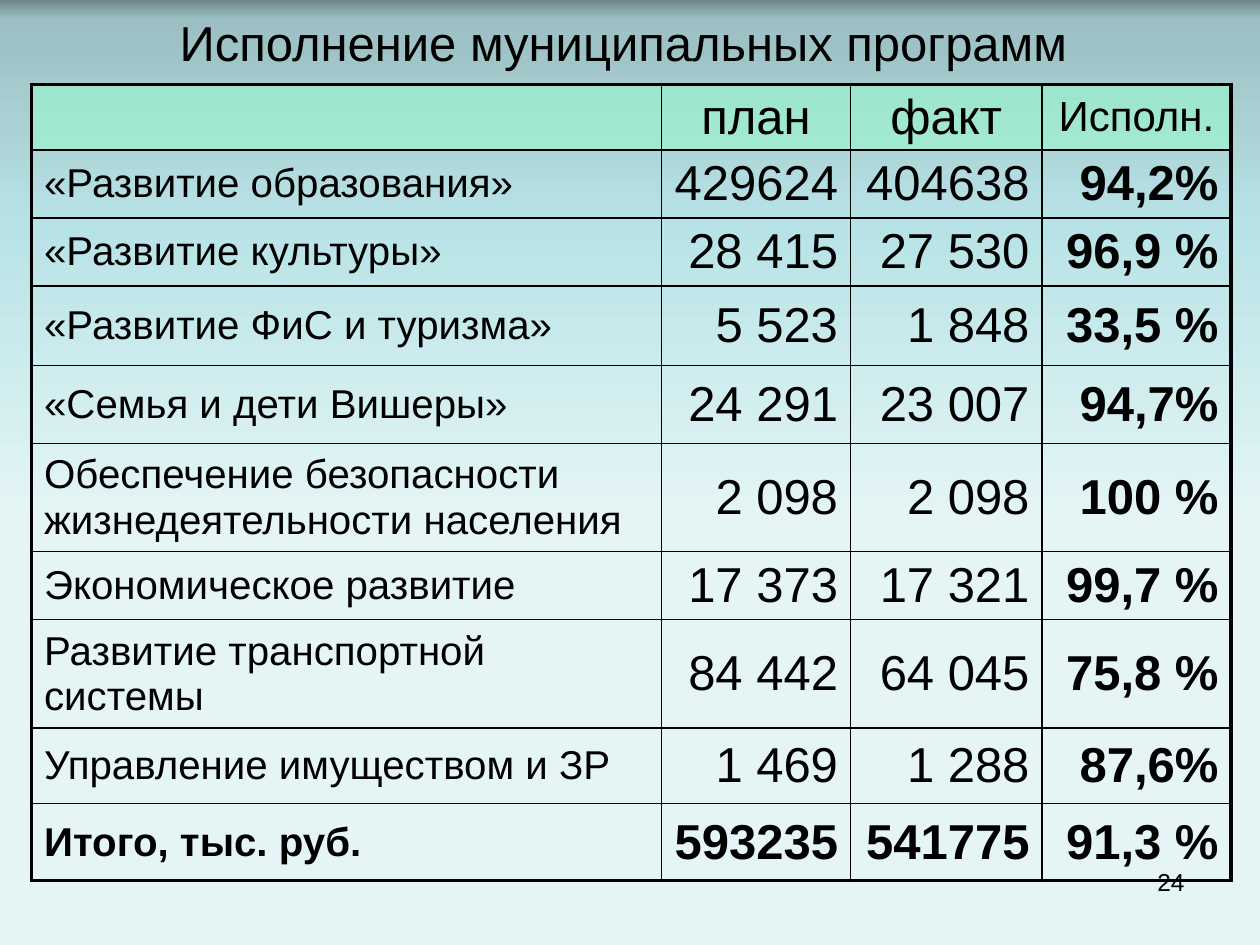
from dataclasses import dataclass
from typing import NamedTuple

from lxml.etree import SubElement
from pptx import Presentation
from pptx.dml.color import RGBColor
from pptx.enum.text import MSO_ANCHOR, PP_ALIGN
from pptx.oxml import parse_xml
from pptx.oxml.ns import qn
from pptx.util import Inches, Pt


@dataclass(frozen=True)
class Theme:
    """Colours, font and type sizes of the slide."""

    font: str = "Arial"
    ink: str = "000000"
    header: str = "99FFCC"
    header_alpha: int = 50
    sky: tuple = ((0, "6D8688"), (2, "9BBFC2"), (24, "B8E3E6"), (55, "E5F5F6"))
    large: int = 28
    unit: int = 24
    label: int = 23
    page: int = 14
    outer_line: float = 2.25
    inner_line: float = 1


class Box(NamedTuple):
    """Position and size in inches."""

    left: float
    top: float
    width: float
    height: float

    def lengths(self) -> tuple:
        """Return the box as slide lengths."""
        return tuple(Inches(value) for value in self)


class Programme(NamedTuple):
    """One table row."""

    name: str
    plan: str
    actual: str
    share: str
    height: float
    total: bool = False
    spaced: bool = True


THEME = Theme()
TITLE_BOX = Box(0.5, 0.17, 9, 0.33)
TABLE_BOX = Box(0.25, 0.67, 9.52, 6.33)
PAGE_BOX = Box(7.17, 6.83, 2.33, 0.52)
COLUMNS = (5, 1.5, 1.52, 1.5)
HEADER = Programme("", "план", "факт", "Исполн.", 0.52)
PROGRAMMES = (
    Programme("«Развитие образования»", "429624", "404638", "94,2%", 0.54),
    Programme("«Развитие культуры»", "28 415", "27 530", "96,9 %", 0.54),
    Programme("«Развитие ФиС и туризма»", "5 523", "1 848", "33,5 %", 0.63),
    Programme("«Семья и дети Вишеры»", "24 291", "23 007", "94,7%", 0.62),
    Programme("Обеспечение безопасности жизнедеятельности населения",
              "2 098", "2 098", "100 %", 0.86),
    Programme("Экономическое развитие", "17 373", "17 321", "99,7 %", 0.54),
    Programme("Развитие транспортной системы", "84 442", "64 045", "75,8 %", 0.86, spaced=False),
    Programme("Управление имуществом и ЗР", "1 469", "1 288", "87,6%", 0.6),
    Programme("Итого, тыс. руб.", "593235", "541775", "91,3 %", 0.61, total=True),
)


def write(frame, text: str, size: float, alignment, bold: bool = False):
    """Write one formatted run and return its paragraph."""
    paragraph = frame.paragraphs[0]
    paragraph.alignment = alignment
    run = paragraph.add_run()
    run.text = text
    run.font.name = THEME.font
    run.font.size = Pt(size)
    run.font.bold = bold
    run.font.color.rgb = RGBColor.from_string(THEME.ink)
    return paragraph


def paint_background(slide) -> None:
    """Fill the background with a vertical gradient."""
    slide.background.fill.solid()
    properties = slide.background._cSld.bg.bgPr
    stops = "".join(
        f'<a:gs pos="{position * 1000}"><a:srgbClr val="{color}"/></a:gs>'
        for position, color in (*THEME.sky, (100, THEME.sky[-1][1]))
    )
    gradient = parse_xml(
        '<a:gradFill xmlns:a="http://schemas.openxmlformats.org/drawingml/2006/main" '
        f'rotWithShape="1"><a:gsLst>{stops}</a:gsLst>'
        '<a:lin ang="5400000" scaled="0"/></a:gradFill>'
    )
    properties.replace(properties.find(qn("a:solidFill")), gradient)


def draw_borders(cell, outer_sides: dict) -> None:
    """Draw thick lines on outer sides and thin lines elsewhere."""
    properties = cell._tc.get_or_add_tcPr()
    for side, outer in outer_sides.items():
        width = THEME.outer_line if outer else THEME.inner_line
        line = SubElement(properties, qn(f"a:ln{side}"), w=str(Pt(width)))
        fill = SubElement(line, qn("a:solidFill"))
        SubElement(fill, qn("a:srgbClr"), val=THEME.ink)


def fill_header(cell) -> None:
    """Give a header cell its translucent fill."""
    cell.fill.solid()
    cell.fill.fore_color.rgb = RGBColor.from_string(THEME.header)
    color = cell._tc.tcPr.find(qn("a:solidFill")).find(qn("a:srgbClr"))
    SubElement(color, qn("a:alpha"), val=str(THEME.header_alpha * 1000))


def write_cell(cell, row: Programme, column: int) -> None:
    """Write the text of one table cell."""
    is_header = row is HEADER
    cell.vertical_anchor = MSO_ANCHOR.MIDDLE
    cell.margin_left = cell.margin_right = Inches(0 if is_header else 0.1)
    cell.margin_top = cell.margin_bottom = Inches(0 if is_header else 0.02)
    if not row[column]:
        return
    is_last = column == len(COLUMNS) - 1
    if is_header:
        alignment, size = PP_ALIGN.CENTER, THEME.unit if is_last else THEME.large
    elif column == 0:
        alignment, size = PP_ALIGN.LEFT, THEME.label
    else:
        alignment, size = PP_ALIGN.RIGHT, THEME.large
    bold = row.total or (is_last and not is_header)
    paragraph = write(cell.text_frame, row[column], size, alignment, bold)
    if row.spaced or column:
        spacing = SubElement(paragraph._p.get_or_add_pPr(), qn("a:spcBef"))
        SubElement(spacing, qn("a:spcPct"), val="20000")


def add_programme_table(slide) -> None:
    """Add the table of programmes."""
    rows = (HEADER, *PROGRAMMES)
    table = slide.shapes.add_table(len(rows), len(COLUMNS), *TABLE_BOX.lengths()).table
    table.first_row = table.horz_banding = False
    for column, width in zip(table.columns, COLUMNS):
        column.width = Inches(width)
    for row_index, row in enumerate(rows):
        table.rows[row_index].height = Inches(row.height)
        for column in range(len(COLUMNS)):
            cell = table.cell(row_index, column)
            draw_borders(cell, {
                "L": column == 0,
                "R": column == len(COLUMNS) - 1,
                "T": row is HEADER,
                "B": row.total,
            })
            if row is HEADER:
                fill_header(cell)
            else:
                cell.fill.background()
            write_cell(cell, row, column)


def main() -> None:
    """Build and save the slide."""
    presentation = Presentation()
    presentation.slide_width, presentation.slide_height = Inches(10), Inches(7.5)
    slide = presentation.slides.add_slide(presentation.slide_layouts[5])
    paint_background(slide)
    page = slide.shapes.add_textbox(*PAGE_BOX.lengths())
    page.text_frame.word_wrap = True
    write(page.text_frame, "24", THEME.page, PP_ALIGN.RIGHT)
    title = slide.shapes.title
    title.left, title.top, title.width, title.height = TITLE_BOX.lengths()
    title.text_frame.vertical_anchor = MSO_ANCHOR.MIDDLE
    write(title.text_frame, "Исполнение муниципальных программ ", THEME.large, PP_ALIGN.CENTER)
    add_programme_table(slide)
    presentation.save("out.pptx")


if __name__ == "__main__":
    main()
